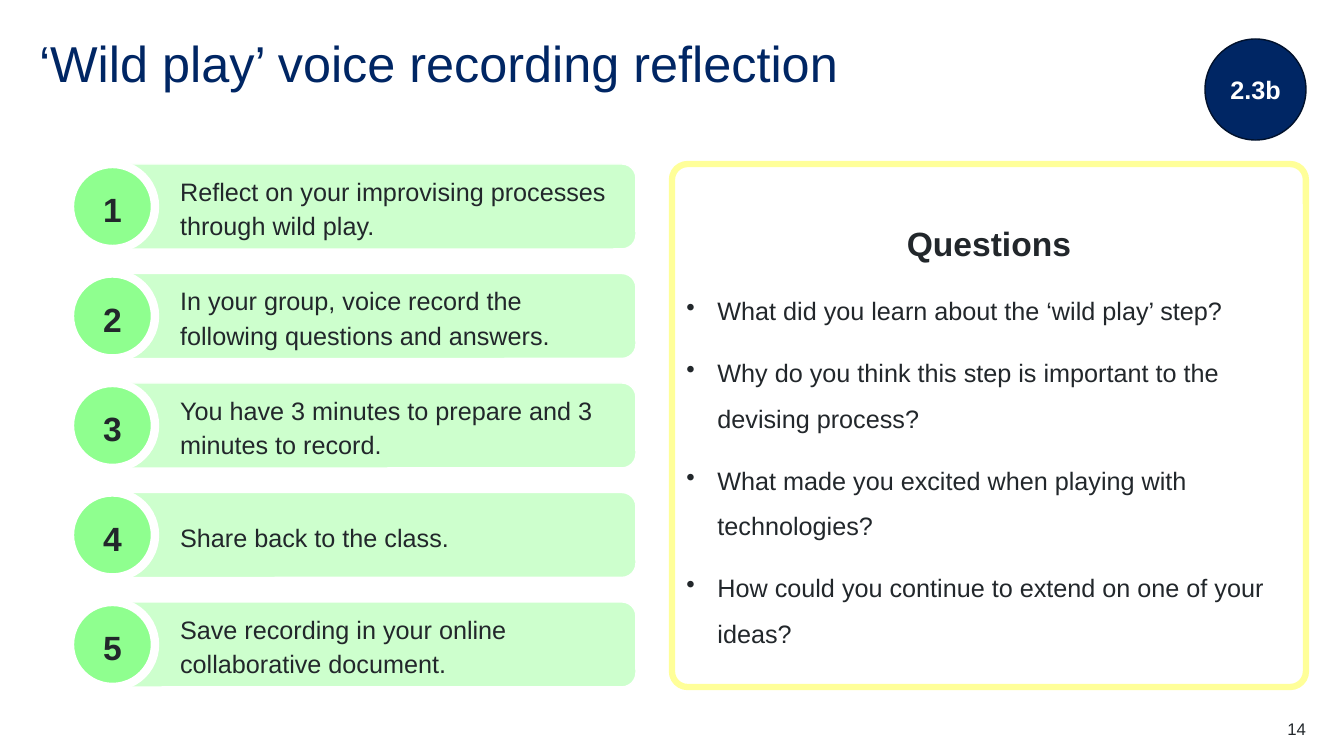
import pptx
import pptx.util
import pptx.dml.color
import pptx.enum.shapes
import pptx.enum.text
import pptx.oxml

RGBColor = pptx.dml.color.RGBColor
MSO_SHAPE = pptx.enum.shapes.MSO_SHAPE
PP_ALIGN = pptx.enum.text.PP_ALIGN
MSO_ANCHOR = pptx.enum.text.MSO_ANCHOR

TITLE = "‘Wild play’ voice recording reflection"
BADGE = "2.3b"
STEPS = [
    "Reflect on your improvising processes through wild play.",
    "In your group, voice record the following questions and answers.",
    "You have 3 minutes to prepare and 3 minutes to record.",
    "Share back to the class.",
    "Save recording in your online collaborative document.",
]
QUESTIONS_HEADING = "Questions"
QUESTIONS = [
    "What did you learn about the ‘wild play’ step?",
    "Why do you think this step is important to the devising process?",
    "What made you excited when playing with technologies?",
    "How could you continue to extend on one of your ideas?",
]
PAGE_NUMBER = "14"

FONT = "Arial"
NAVY = RGBColor(0x00, 0x26, 0x64)
DARK_NAVY = RGBColor(0x00, 0x11, 0x2C)
INK = RGBColor(0x22, 0x27, 0x2B)
WHITE = RGBColor(0xFF, 0xFF, 0xFF)
PALE_GREEN = RGBColor(0xCD, 0xFF, 0xCD)
GREEN = RGBColor(0x8F, 0xFF, 0x8F)
YELLOW = RGBColor(0xFF, 0xFF, 0x99)

SLIDE_W, SLIDE_H = 1344, 756
CONTENT_TOP, CONTENT_H = 164, 523
STEP_H = 85
STEP_PITCH = (CONTENT_H - STEP_H) / (len(STEPS) - 1)
BULLET_INDENT = 31


def px(length):
    return pptx.util.Emu(round(length * 12192000 / SLIDE_W))


def set_insets(frame, left, top, right, bottom):
    frame.margin_left, frame.margin_top = px(left), px(top)
    frame.margin_right, frame.margin_bottom = px(right), px(bottom)


def format_paragraph(paragraph, size, color, bold=False, align=PP_ALIGN.LEFT,
                     line_spacing=1.0, space_after=0):
    paragraph.alignment = align
    paragraph.line_spacing = line_spacing
    paragraph.space_before = pptx.util.Pt(0)
    paragraph.space_after = pptx.util.Pt(space_after)
    for run in paragraph.runs:
        run.font.name = FONT
        run.font.size = pptx.util.Pt(size)
        run.font.bold = bold
        run.font.color.rgb = color


def add_bullet(paragraph):
    properties = paragraph._p.get_or_add_pPr()
    properties.set("marL", str(px(BULLET_INDENT)))
    properties.set("indent", str(-px(BULLET_INDENT)))
    properties.append(pptx.oxml.parse_xml(
        '<a:buChar xmlns:a="http://schemas.openxmlformats.org/drawingml/2006/main" char="•"/>'))


def add_box(slide, preset, box, fill, line, line_width, text):
    shape = slide.shapes.add_shape(preset, *map(px, box))
    shape.shadow.inherit = False
    if fill is None:
        shape.fill.background()
    else:
        shape.fill.solid()
        shape.fill.fore_color.rgb = fill
    shape.line.color.rgb = line
    shape.line.width = pptx.util.Pt(line_width)
    shape.text_frame.word_wrap = True
    shape.text_frame.vertical_anchor = MSO_ANCHOR.MIDDLE
    shape.text_frame.text = text
    return shape


def add_title(slide):
    title = slide.shapes.title
    title.left, title.top, title.width, title.height = map(px, (39, 39, 1266, 60))
    frame = title.text_frame
    frame.text = TITLE
    frame.vertical_anchor = MSO_ANCHOR.TOP
    frame.auto_size = pptx.enum.text.MSO_AUTO_SIZE.NONE
    set_insets(frame, 0, 0, 0, 0)
    format_paragraph(frame.paragraphs[0], 36, NAVY, line_spacing=0.9)


def add_step(slide, index, instruction):
    top = CONTENT_TOP + index * STEP_PITCH
    card = add_box(slide, MSO_SHAPE.ROUNDED_RECTANGLE, (105, top, 531, STEP_H),
                   PALE_GREEN, WHITE, 1, instruction)
    set_insets(card.text_frame, 71, 8, 15, 8)
    format_paragraph(card.text_frame.paragraphs[0], 18, INK,
                     line_spacing=1.14, space_after=12)
    number = add_box(slide, MSO_SHAPE.OVAL, (70, top, STEP_H, STEP_H),
                     GREEN, WHITE, 6, str(index + 1))
    format_paragraph(number.text_frame.paragraphs[0], 24, INK, True, PP_ALIGN.CENTER,
                     line_spacing=1.14, space_after=12)


def add_questions(slide):
    panel = add_box(slide, MSO_SHAPE.ROUNDED_RECTANGLE, (672, CONTENT_TOP, 634, CONTENT_H),
                    None, YELLOW, 4.5, QUESTIONS_HEADING)
    panel.adjustments[0] = 0.03
    frame = panel.text_frame
    format_paragraph(frame.paragraphs[0], 24, INK, True, PP_ALIGN.CENTER,
                     line_spacing=1.5, space_after=12)
    for question in QUESTIONS:
        paragraph = frame.add_paragraph()
        paragraph.text = question
        format_paragraph(paragraph, 18, INK, line_spacing=1.5, space_after=12)
        add_bullet(paragraph)


def add_page_number(slide):
    page = slide.shapes.add_textbox(*map(px, (1227, 719, 79, 20)))
    page.text_frame.word_wrap = True
    page.text_frame.text = PAGE_NUMBER
    set_insets(page.text_frame, 0, 0, 0, 0)
    format_paragraph(page.text_frame.paragraphs[0], 12, INK, align=PP_ALIGN.RIGHT)


def main():
    deck = pptx.Presentation()
    deck.slide_width, deck.slide_height = px(SLIDE_W), px(SLIDE_H)
    slide = deck.slides.add_slide(deck.slide_layouts.get_by_name("Title Only"))
    add_title(slide)
    badge = add_box(slide, MSO_SHAPE.OVAL, (1205, 39, 101, 101), NAVY, DARK_NAVY, 1, BADGE)
    format_paragraph(badge.text_frame.paragraphs[0], 18, WHITE, True, PP_ALIGN.CENTER)
    for index, instruction in enumerate(STEPS):
        add_step(slide, index, instruction)
    add_questions(slide)
    add_page_number(slide)
    deck.save("out.pptx")


if __name__ == "__main__":
    main()
